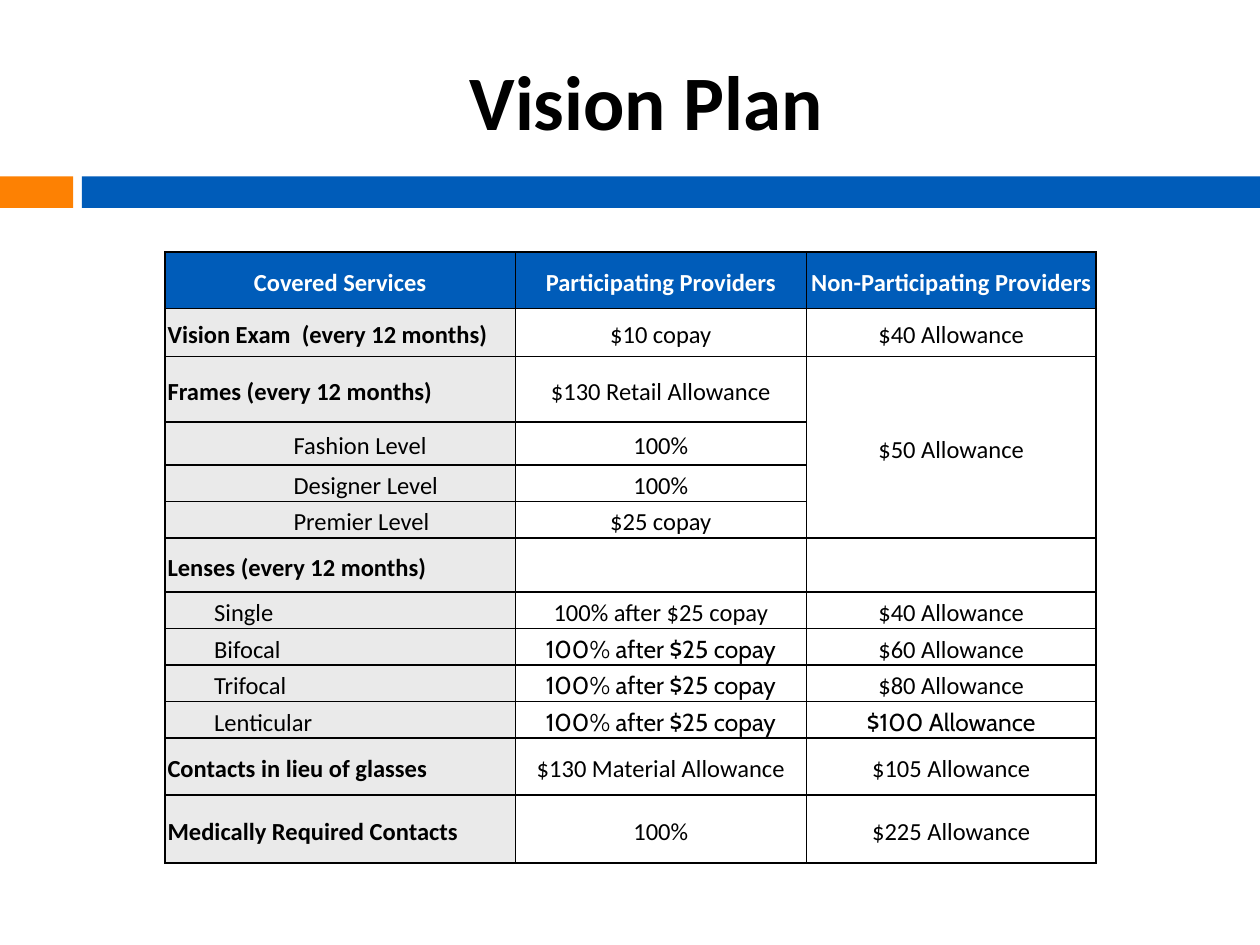
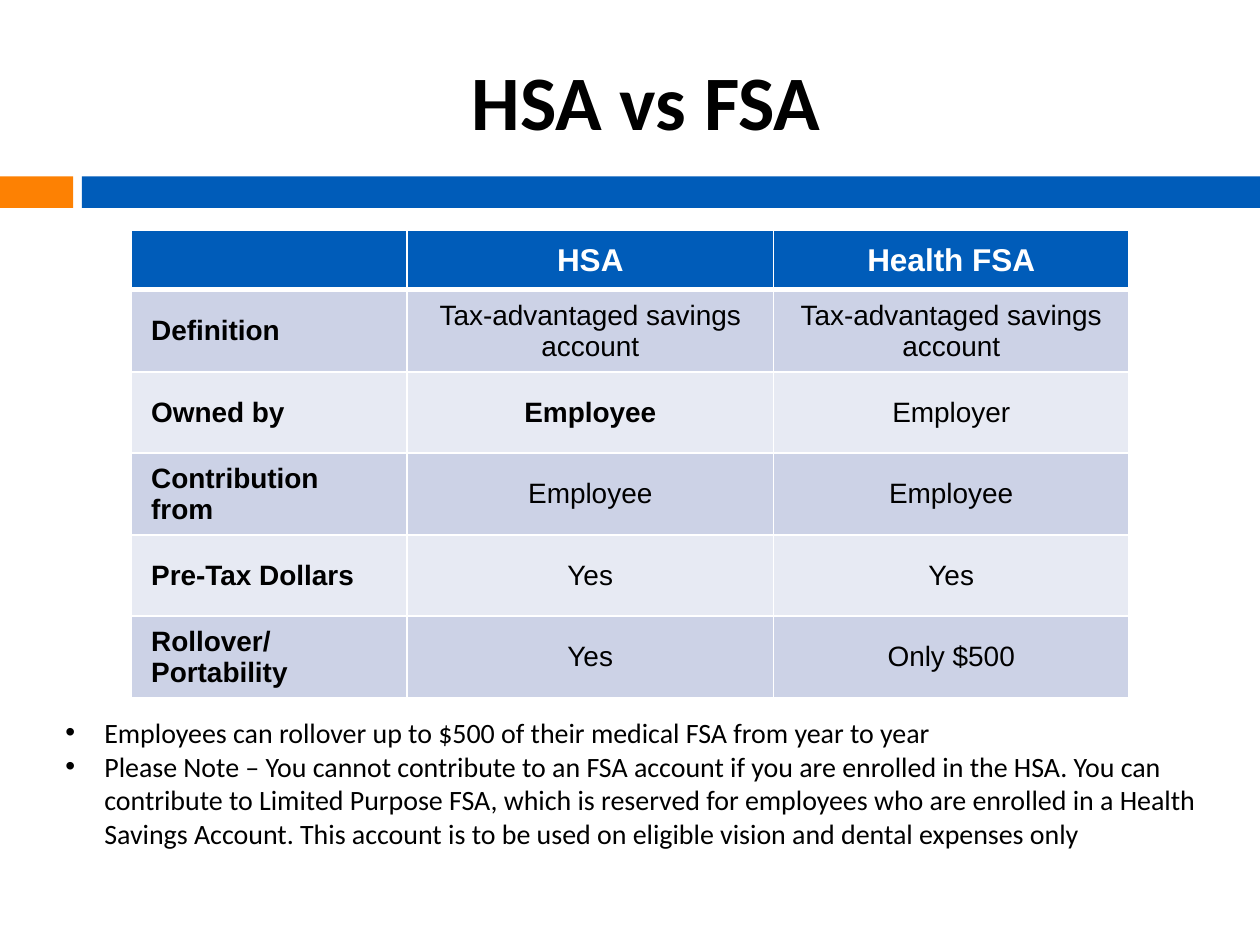
from lxml import etree
from pptx import Presentation
from pptx import util as u
from pptx.dml.color import RGBColor
from pptx.enum import shapes, text
from pptx.oxml import ns

ORANGE = RGBColor(0xFD, 0x81, 0x03)
BLUE = RGBColor(0x00, 0x5C, 0xB9)
BLACK = RGBColor(0, 0, 0)
WHITE = RGBColor(255, 255, 255)
GREY = RGBColor(0xEA, 0xEA, 0xEA)
STRIPES = (RGBColor(0xCC, 0xD2, 0xE6), RGBColor(0xE7, 0xEA, 0xF3))

WIDTH, HEIGHT = 10, 7.5
TITLE_BOX = (0.67, 0.25, 8.92, 1.08)
BANDS = [(0, 0.58, ORANGE), (0.65, WIDTH - 0.65, BLUE)]
BAND_TOP, BAND_HEIGHT = 1.4, 0.25
LEVEL_INDENT = {"group": 0, "lens": 0.37, "frame": 1}

VISION_HEAD = ["Covered Services", "Participating Providers", "Non-Participating Providers"]
LENS_COPAY = "100% after $25 copay"
VISION_ROWS = [
    ("group", 0.38, "Vision Exam  (every 12 months)", "$10 copay", "$40 Allowance"),
    ("group", 0.52, "Frames (every 12 months)", "$130 Retail Allowance", "$50 Allowance"),
    ("frame", 0.34, "Fashion Level", "100%", ""),
    ("frame", 0.29, "Designer Level", "100%", ""),
    ("frame", 0.29, "Premier Level", "$25 copay", ""),
    ("group", 0.43, "Lenses (every 12 months)", "", ""),
    ("lens", 0.29, "Single", LENS_COPAY, "$40 Allowance"),
    ("lens", 0.29, "Bifocal", LENS_COPAY, "$60 Allowance"),
    ("lens", 0.29, "Trifocal", LENS_COPAY, "$80 Allowance"),
    ("lens", 0.29, "Lenticular", LENS_COPAY, "$100 Allowance"),
    ("group", 0.45, "Contacts in lieu of glasses", "$130 Material Allowance", "$105 Allowance"),
    ("group", 0.54, "Medically Required Contacts", "100%", "$225 Allowance"),
]
CABIN_CELLS = {(8, 1), (9, 1), (10, 1), (10, 2)}

ACCOUNT_ROWS = [
    ["", "HSA", "Health FSA"],
    ["Definition", "Tax-advantaged savings account", "Tax-advantaged savings account"],
    ["Owned by", "Employee", "Employer"],
    ["Contribution from", "Employee", "Employee"],
    ["Pre-Tax Dollars", "Yes", "Yes"],
    ["Rollover/Portability", "Yes", "Only $500"],
]
OWNER_CELL = (2, 1)
ACCOUNT_NOTES = [
    "Employees can rollover up to $500 of their medical FSA from year to year",
    "Please Note – You cannot contribute to an FSA account if you are enrolled in the HSA. "
    "You can contribute to Limited Purpose FSA, which is reserved for employees who are "
    "enrolled in a Health Savings Account. This account is to be used on eligible vision "
    "and dental expenses only",
]


def inches(*lengths):
    return [u.Inches(n) for n in lengths]


def add_run(p, words, font, size, color, bold=False):
    r = p.add_run()
    r.text = words
    r.font.name, r.font.size, r.font.bold = font, u.Pt(size), bold
    r.font.color.rgb = color


def set_indent(p, left, first=0):
    p_pr = p._p.get_or_add_pPr()
    p_pr.set("marL", str(u.Inches(left)))
    p_pr.set("indent", str(u.Inches(first)))
    return p_pr


def add_titled_slide(prs, title):
    s = prs.slides.add_slide(prs.slide_layouts[5])
    for left, width, color in BANDS:
        sp = s.shapes.add_shape(shapes.MSO_SHAPE.RECTANGLE,
                                *inches(left, BAND_TOP, width, BAND_HEIGHT))
        sp.shadow.inherit = False
        sp.fill.solid()
        sp.fill.fore_color.rgb = color
        sp.line.fill.background()
    sp = s.shapes.title
    sp.left, sp.top, sp.width, sp.height = inches(*TITLE_BOX)
    sp.text_frame.vertical_anchor = text.MSO_ANCHOR.MIDDLE
    p = sp.text_frame.paragraphs[0]
    p.alignment = text.PP_ALIGN.CENTER
    add_run(p, title, "Calibri", 44, BLACK, True)
    return s


def set_borders(cell, color, bottom=1):
    tc_pr = cell._tc.get_or_add_tcPr()
    for side, points in zip("LRTB", (1, 1, 1, bottom)):
        ln = etree.SubElement(tc_pr, ns.qn(f"a:ln{side}"), w=str(u.Pt(points)))
        fill = etree.SubElement(ln, ns.qn("a:solidFill"))
        etree.SubElement(fill, ns.qn("a:srgbClr"), val=str(color))


def add_grid(s, left, top, widths, heights):
    box = inches(left, top, sum(widths), sum(heights))
    table = s.shapes.add_table(len(heights), len(widths), *box).table
    for column, width in zip(table.columns, widths):
        column.width = u.Inches(width)
    for row, height in zip(table.rows, heights):
        row.height = u.Inches(height)
    return table


def style_cell(cell, fill, border, inset_x, inset_y, bottom=1):
    set_borders(cell, border, bottom)
    cell.fill.solid()
    cell.fill.fore_color.rgb = fill
    cell.margin_left = cell.margin_right = u.Inches(inset_x)
    cell.margin_top = cell.margin_bottom = u.Inches(inset_y)
    cell.vertical_anchor = text.MSO_ANCHOR.MIDDLE
    return cell.text_frame.paragraphs[0]


def build_vision(prs):
    s = add_titled_slide(prs, "Vision Plan")
    rows = [("head", 0.45, *VISION_HEAD), *VISION_ROWS]
    table = add_grid(s, 1.31, 2, [2.78, 2.31, 2.3], [row[1] for row in rows])
    for i, (level, _, *cells) in enumerate(rows):
        head = level == "head"
        for j, words in enumerate(cells):
            fill = BLUE if head else GREY if j == 0 else WHITE
            p = style_cell(table.cell(i, j), fill, BLACK, 0.02, 0)
            p.line_spacing, p.space_after = 1.19, u.Pt(6)
            if head or j:
                p.alignment = text.PP_ALIGN.CENTER
            else:
                set_indent(p, LEVEL_INDENT[level])
            if words:
                font = "Cabin" if (i, j) in CABIN_CELLS else "Calibri"
                bold = head or (j == 0 and level == "group")
                add_run(p, words, font, 14, WHITE if head else BLACK, bold)
    table.cell(2, 2).merge(table.cell(5, 2))


def build_accounts(prs):
    s = add_titled_slide(prs, "HSA vs FSA")
    heights = [0.47] + [0.64] * (len(ACCOUNT_ROWS) - 1)
    table = add_grid(s, 1.04, 1.83, [2.19, 2.91, 2.82], heights)
    for i, cells in enumerate(ACCOUNT_ROWS):
        head = i == 0
        for j, words in enumerate(cells):
            fill = BLUE if head else STRIPES[(i - 1) % 2]
            p = style_cell(table.cell(i, j), fill, WHITE, 0.16, 0.08, 3 if head else 1)
            if j:
                p.alignment = text.PP_ALIGN.CENTER
            if words:
                bold = head or j == 0 or (i, j) == OWNER_CELL
                add_run(p, words, "Arial", 18 if head else 16, WHITE if head else BLACK, bold)

    tf = s.shapes.add_textbox(*inches(0.42, 5.63, 9.18, 1.18)).text_frame
    tf.word_wrap = True
    for i, note in enumerate(ACCOUNT_NOTES):
        p = tf.add_paragraph() if i else tf.paragraphs[0]
        p_pr = set_indent(p, 0.31, -0.31)
        etree.SubElement(p_pr, ns.qn("a:buFont"), typeface="Arial")
        etree.SubElement(p_pr, ns.qn("a:buChar"), char="•")
        add_run(p, note, "Calibri", 16, BLACK)


def main():
    prs = Presentation()
    prs.slide_width, prs.slide_height = inches(WIDTH, HEIGHT)
    build_vision(prs)
    build_accounts(prs)
    prs.save("out.pptx")


if __name__ == "__main__":
    main()
